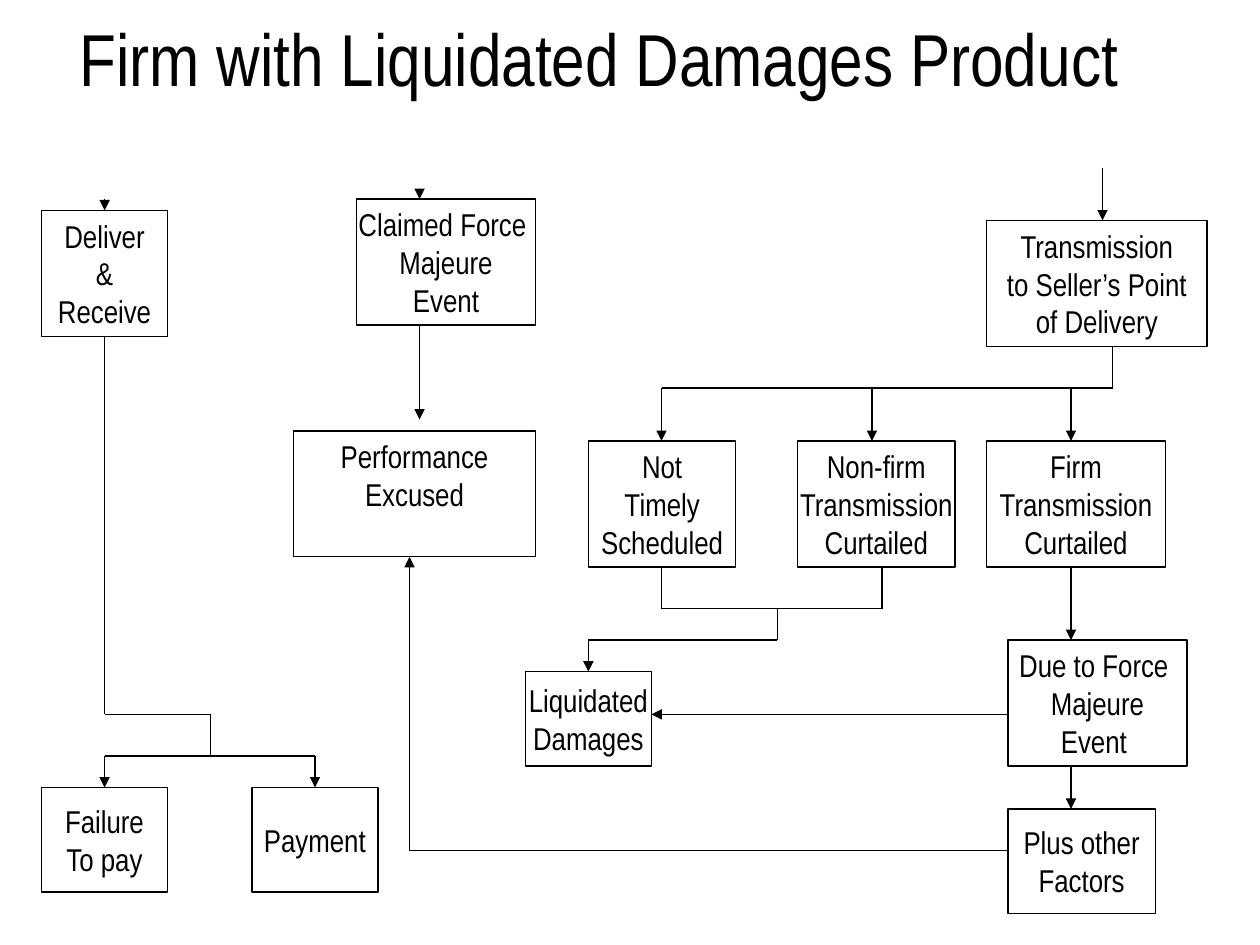
from itertools import pairwise

from lxml import etree
from pptx import Presentation
from pptx.dml.color import RGBColor
from pptx.enum.shapes import MSO_CONNECTOR as Connector, MSO_SHAPE as Shape
from pptx.enum.text import MSO_ANCHOR as Anchor, PP_ALIGN as Align
from pptx.oxml.ns import qn
from pptx.util import Inches, Pt

BLACK = RGBColor(0x00, 0x00, 0x00)
WHITE = RGBColor(0xFF, 0xFF, 0xFF)
FONT = "Arial Narrow"
LINE_WIDTH = Pt(0.75)


def write_lines(shape, text, size, anchor=Anchor.MIDDLE):
    """Write centred, unwrapped paragraphs, one for each line of text."""
    frame = shape.text_frame
    frame.word_wrap = False
    frame.vertical_anchor = anchor
    for index, line in enumerate(text.split("\n")):
        paragraph = frame.paragraphs[0] if index == 0 else frame.add_paragraph()
        paragraph.text = line
        paragraph.alignment = Align.CENTER
        paragraph.font.name = FONT
        paragraph.font.size = Pt(size)
        paragraph.font.color.rgb = BLACK


def add_step(slide, region, box, text, anchor=Anchor.MIDDLE):
    """Add an outlined step whose box is relative to its region."""
    left, top, width, height = box
    shape = slide.shapes.add_shape(
        Shape.RECTANGLE, Inches(region[0] + left), Inches(region[1] + top),
        Inches(width), Inches(height))
    shape.shadow.inherit = False
    shape.fill.solid()
    shape.fill.fore_color.rgb = WHITE
    shape.line.color.rgb = BLACK
    shape.line.width = LINE_WIDTH
    write_lines(shape, text, 18, anchor)


def add_route(slide, region, points, arrow=True):
    """Join points relative to a region, with an arrowhead at the last one."""
    places = [(Inches(region[0] + x), Inches(region[1] + y)) for x, y in points]
    for start, end in pairwise(places):
        connector = slide.shapes.add_connector(Connector.STRAIGHT, *start, *end)
        connector.line.color.rgb = BLACK
        connector.line.width = LINE_WIDTH
        properties = connector._element.spPr
        etree.SubElement(properties, qn("a:effectLst"))
    if arrow:
        outline = properties.find(qn("a:ln"))
        etree.SubElement(outline, qn("a:tailEnd"), type="triangle")


def add_title(slide, region):
    """Add the slide title on one line, centred on its box."""
    title = slide.shapes.add_shape(Shape.RECTANGLE, *map(Inches, region))
    title.shadow.inherit = False
    title.fill.background()
    title.line.fill.background()
    write_lines(title, "Firm with Liquidated Damages Product", 42)
    title.text_frame.paragraphs[0].line_spacing = 0.9


def add_delivery_branch(slide, region):
    """Add delivery and its two payment outcomes."""
    add_step(slide, region, (0, 0.09, 1, 1), "Deliver\n&\nReceive")
    add_step(slide, region, (0, 4.67, 1, 0.83), "Failure\nTo pay")
    add_step(slide, region, (1.67, 4.67, 1, 0.83), "Payment")
    add_route(slide, region, [(0.5, 0), (0.5, 0.09)])
    add_route(slide, region,
              [(0.5, 1.09), (0.5, 4.09), (1.34, 4.09), (1.34, 4.42)], arrow=False)
    for x in (0.5, 2.17):
        add_route(slide, region, [(1.34, 4.42), (x, 4.42), (x, 4.67)])


def add_majeure_branch(slide, region):
    """Add the force majeure claim and the excused performance."""
    add_step(slide, region, (0.5, 0.08, 1.42, 1), "Claimed Force \nMajeure\nEvent")
    add_step(slide, region, (0, 1.92, 1.92, 1), "Performance\nExcused", Anchor.TOP)
    add_route(slide, region, [(1, 0), (1, 0.08)])
    add_route(slide, region, [(1, 1.08), (1, 1.83)])


def add_transmission_branch(slide, region):
    """Add the transmission cases and what follows from each."""
    steps = [
        ((3.66, 0.42, 1.75, 1), "Transmission\nto Seller’s Point\nof Delivery"),
        ((0.5, 2.17, 1.17, 1), "Not\nTimely\nScheduled"),
        ((2.16, 2.17, 1.25, 1), "Non-firm\nTransmission\nCurtailed"),
        ((3.66, 2.17, 1.42, 1), "Firm\nTransmission\nCurtailed"),
        ((0, 4, 1, 0.75), "Liquidated\nDamages"),
        ((3.83, 3.75, 1.42, 1), "Due to Force \nMajeure\nEvent "),
        ((3.83, 5.09, 1.17, 0.83), "Plus other\nFactors"),
    ]
    for box, text in steps:
        add_step(slide, region, box, text)
    arrows = [
        [(4.58, 0), (4.58, 0.42)],
        [(4.66, 1.42), (4.66, 1.75), (1.08, 1.75), (1.08, 2.17)],
        [(2.75, 1.75), (2.75, 2.17)],
        [(4.33, 1.75), (4.33, 2.17)],
        [(2, 3.5), (2, 3.75), (0.5, 3.75), (0.5, 4)],
        [(4.33, 3.17), (4.33, 3.75)],
        [(3.83, 4.34), (1, 4.34)],
        [(4.33, 4.75), (4.33, 5.09)],
    ]
    for points in arrows:
        add_route(slide, region, points)
    add_route(slide, region,
              [(2.83, 3.17), (2.83, 3.5), (1.08, 3.5), (1.08, 3.17)], arrow=False)


def add_excuse_return(slide, region):
    """Add the route from the other factors back to excused performance."""
    width, height = region[2:]
    add_route(slide, region, [(width, height), (0, height), (0, 0)])


def main():
    """Build and save the slide."""
    presentation = Presentation()
    presentation.slide_width = Inches(10)
    presentation.slide_height = Inches(7.5)
    slide = presentation.slides.add_slide(presentation.slide_layouts[6])
    add_delivery_branch(slide, (0.33, 1.58, 2.67, 5.5))
    add_majeure_branch(slide, (2.33, 1.5, 1.92, 2.92))
    add_transmission_branch(slide, (4.17, 1.33, 5.41, 5.92))
    add_excuse_return(slide, (3.25, 4.42, 4.75, 2.33))
    add_title(slide, (1.42, 0, 6.67, 1))
    presentation.save("out.pptx")


if __name__ == "__main__":
    main()
